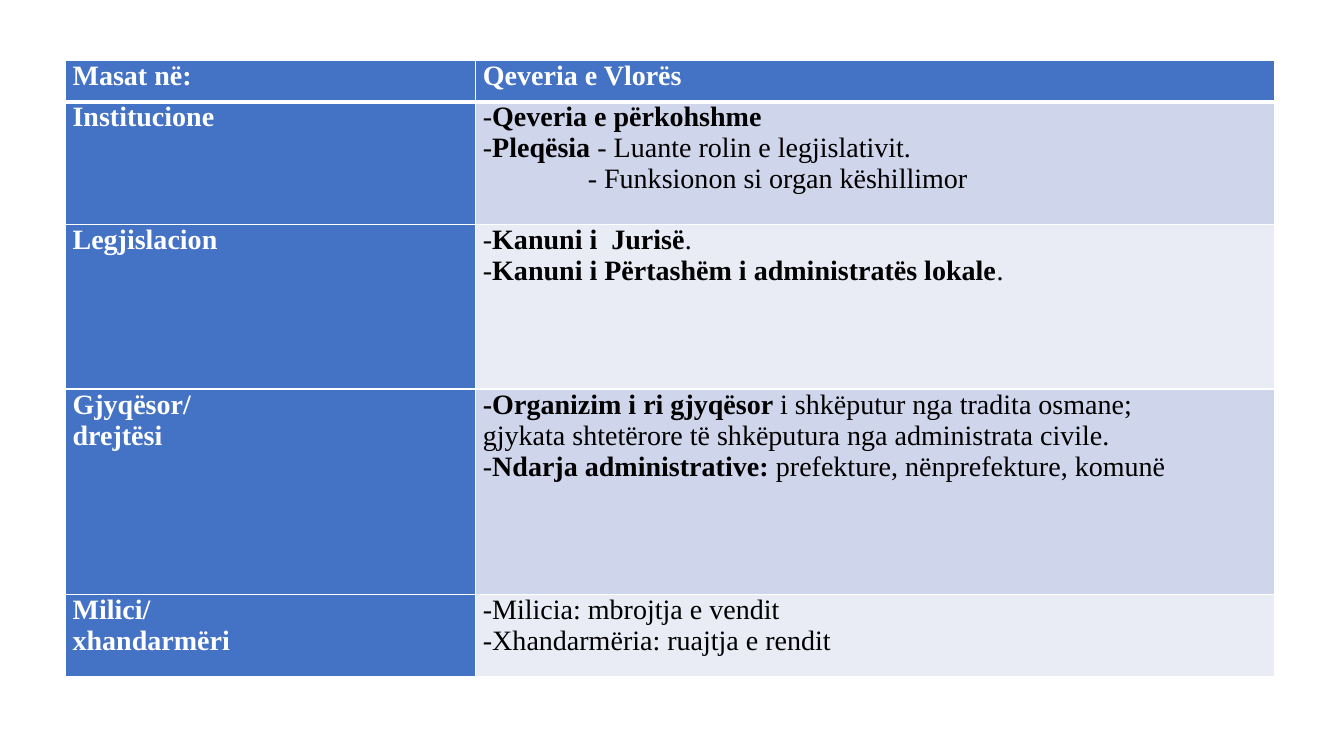
from lxml import etree
from pptx import Presentation
from pptx.dml.color import RGBColor
from pptx.oxml.ns import qn
from pptx.util import Inches, Pt

COLORS = {
    "header": "4472C4",
    "band_dark": "CFD5EA",
    "band_light": "E9EBF5",
    "white": "FFFFFF",
    "black": "000000",
}
FONT = "Times New Roman"
COL_WIDTHS = [4.07, 7.92]
ROW_HEIGHTS = [0.41, 1.22, 1.63, 2.04, 0.81]
DETAIL_INDENT = Inches(1.04)

# Asterisks enclose bold text; a leading tab marks an indented paragraph.
ROWS = [
    (["*Masat në:*"], ["*Qeveria e Vlorës*"]),
    (["*Institucione*"], [
        "-*Qeveria e përkohshme*",
        "-*Pleqësia* - Luante rolin e legjislativit.",
        "\t- Funksionon si organ këshillimor",
    ]),
    (["*Legjislacion*"], [
        "-*Kanuni i  Jurisë*.",
        "-*Kanuni i Përtashëm i administratës lokale*.",
    ]),
    (["*Gjyqësor/*", "*drejtësi*"], [
        "*-Organizim i ri gjyqësor *i shkëputur nga tradita osmane;",
        "gjykata shtetërore të shkëputura nga administrata civile.",
        "-*Ndarja administrative: *prefekture, nënprefekture, komunë",
    ]),
    (["*Milici/*", "*xhandarmëri*"], [
        "-Milicia: mbrojtja e vendit",
        "-Xhandarmëria: ruajtja e rendit",
    ]),
]


def set_borders(cell, widths):
    tcPr = cell._tc.get_or_add_tcPr()
    for side, width in widths.items():
        ln = etree.SubElement(tcPr, qn(f"a:ln{side}"), w=str(Pt(width)))
        fill = etree.SubElement(ln, qn("a:solidFill"))
        etree.SubElement(fill, qn("a:srgbClr"), val=COLORS["white"])


def write_paragraph(p, text, color):
    if text.startswith("\t"):
        p._p.get_or_add_pPr().set("marL", str(DETAIL_INDENT))
    for i, part in enumerate(text.strip("\t").split("*")):
        if part:
            r = p.add_run()
            r.text = part
            r.font.name = FONT
            r.font.size = Pt(20)
            r.font.bold = i % 2 == 1
            r.font.color.rgb = RGBColor.from_string(COLORS[color])


prs = Presentation()
prs.slide_width = Inches(13.33)
prs.slide_height = Inches(7.5)
s = prs.slides.add_slide(prs.slide_layouts[6])

table = s.shapes.add_table(
    len(ROWS), len(COL_WIDTHS), Inches(0.65), Inches(0.6),
    Inches(sum(COL_WIDTHS)), Inches(sum(ROW_HEIGHTS)),
).table
for col, width in zip(table.columns, COL_WIDTHS):
    col.width = Inches(width)
for row, height in zip(table.rows, ROW_HEIGHTS):
    row.height = Inches(height)

for i, row in enumerate(ROWS):
    for j, paragraphs in enumerate(row):
        cell = table.cell(i, j)
        cell.margin_left = cell.margin_right = Inches(0.07)
        cell.margin_top = cell.margin_bottom = 0
        set_borders(cell, {"L": 1, "R": 1, "T": 3 if i == 1 else 1, "B": 3 if i == 0 else 1})
        is_header = i == 0 or j == 0
        band = "band_dark" if i % 2 else "band_light"
        cell.fill.solid()
        cell.fill.fore_color.rgb = RGBColor.from_string(COLORS["header" if is_header else band])
        tf = cell.text_frame
        for k, text in enumerate(paragraphs):
            p = tf.add_paragraph() if k else tf.paragraphs[0]
            write_paragraph(p, text, "white" if is_header else "black")

prs.save("out.pptx")
